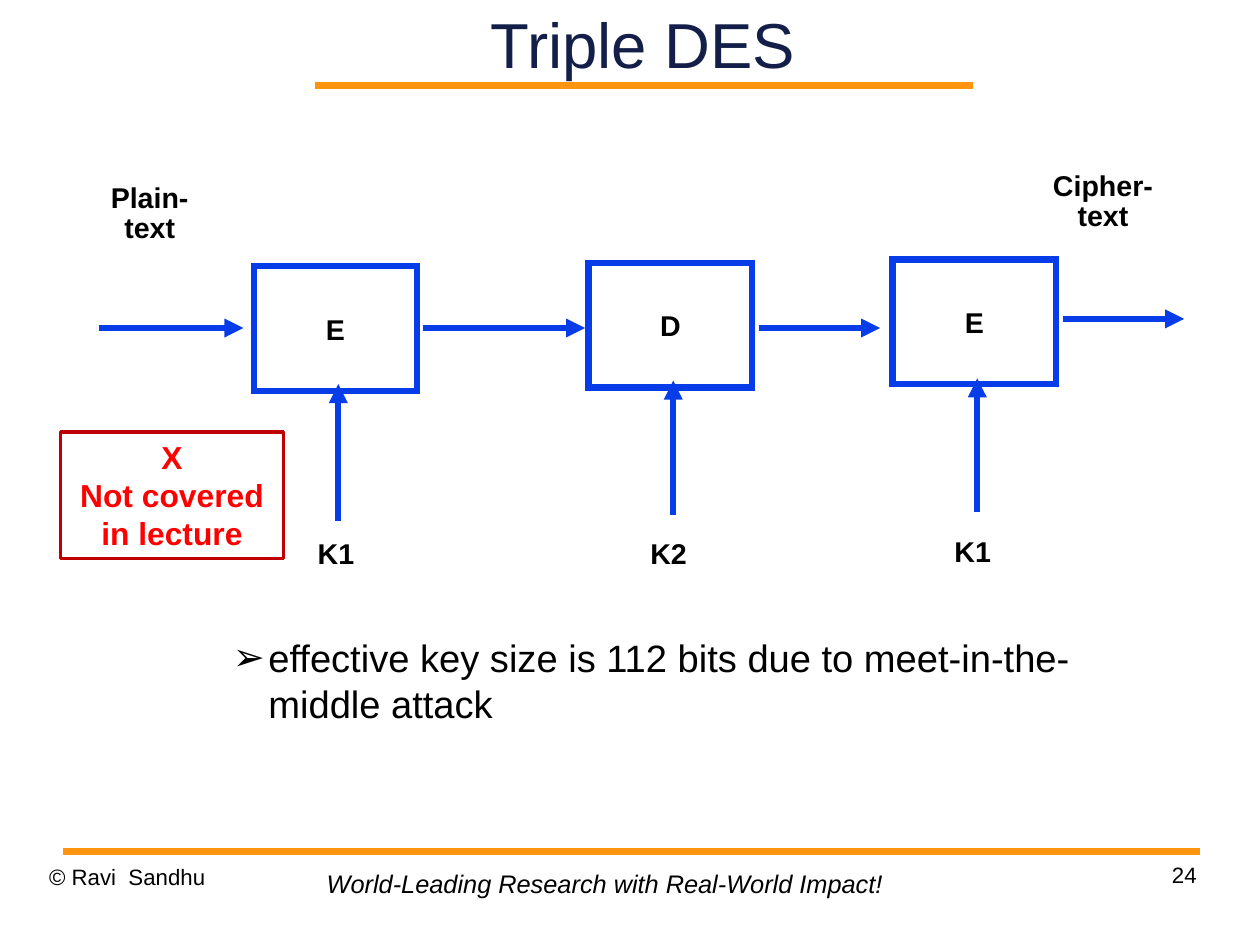
"""Build the Triple DES slide: an encrypt-decrypt-encrypt chain with its keys."""
from lxml import etree
from pptx import Presentation
from pptx.dml.color import RGBColor
from pptx.enum.shapes import MSO_CONNECTOR as Connector, MSO_SHAPE as Shape
from pptx.enum.text import MSO_ANCHOR as Anchor, PP_ALIGN as Align
from pptx.oxml.ns import qn
from pptx.util import Inches, Pt

COLORS = {"title": "131F49", "text": "000000", "rule": "FF950E", "flow": "063DE8",
          "note": "FF0000", "note_border": "C00000"}
CM_PER_INCH = 2.54
LABEL = {"size": Pt(18), "bold": True}
FOOTER = {"size": Pt(14)}
FRAMED = (0.1, 0.05)
TIGHT = (0.07, 0.03)
FLUSH = (0, 0)


def write(shape, lines, font, color="text", align=Align.LEFT, anchor=Anchor.TOP,
          margins=FRAMED, wrap=True, spacing=None):
    frame = shape.text_frame
    horizontal, vertical = map(Inches, margins)
    settings = {"margin_left": horizontal, "margin_right": horizontal,
                "margin_top": vertical, "margin_bottom": vertical,
                "vertical_anchor": anchor, "word_wrap": wrap}
    for name, value in settings.items():
        setattr(frame, name, value)
    for index, line in enumerate(lines):
        paragraph = frame.add_paragraph() if index else frame.paragraphs[0]
        paragraph.alignment = align
        paragraph.line_spacing = spacing
        run = paragraph.add_run()
        run.text = line
        for name, value in {"name": "Arial", **font}.items():
            setattr(run.font, name, value)
        run.font.color.rgb = RGBColor.from_string(COLORS[color])


def add_line(start, end, color, width, arrow=False):
    line = slide.shapes.add_connector(Connector.STRAIGHT, *map(Inches, start + end))
    line.line.color.rgb = RGBColor.from_string(COLORS[color])
    line.line.width = Pt(width)
    if arrow:
        etree.SubElement(line.line._get_or_add_ln(), qn("a:tailEnd"), type="triangle")
    etree.SubElement(line._element.spPr, qn("a:effectLst"))


presentation = Presentation()
presentation.slide_width = Inches(28 / CM_PER_INCH)
presentation.slide_height = Inches(21 / CM_PER_INCH)
slide = presentation.slides.add_slide(presentation.slide_layouts[6])

for left, right, top in [(2.76, 8.51, 0.75), (0.55, 10.5, 7.45)]:
    add_line((left, top), (right, top), "rule", 4.31)

texts = [
    ((0.43, 7.55, 2.57, 0.57), ["© Ravi  Sandhu"], FOOTER,
     {"margins": FLUSH, "spacing": 1.01}),
    ((7.9, 7.53, 2.57, 0.57), ["24"], FOOTER,
     {"margins": FLUSH, "spacing": 1.01, "align": Align.RIGHT}),
    ((2.76, 7.55, 5.08, 0.37), ["World-Leading Research with Real-World Impact!"],
     {"size": Pt(16), "italic": True}, {"wrap": False}),
    ((2.41, 0, 6.43, 0.75), ["Triple DES"], {"size": Pt(40)},
     {"color": "title", "align": Align.CENTER, "anchor": Anchor.MIDDLE, "margins": FLUSH}),
]
for left, top, width, word in [(0.78, 1.59, 1.06, "Plain-"), (8.99, 1.48, 1.32, "Cipher-")]:
    texts.append(((left, top, width, 0.76), [word, "text"], LABEL,
                  {"align": Align.CENTER, "margins": TIGHT, "wrap": False, "spacing": 0.87}))
for left, top, key in [(2.71, 4.7, "K1"), (5.62, 4.7, "K2"), (8.28, 4.68, "K1")]:
    texts.append(((left, top, 0.58, 0.42), [key], LABEL,
                  {"margins": TIGHT, "wrap": False, "spacing": 0.87}))
for place, lines, font, options in texts:
    write(slide.shapes.add_textbox(*map(Inches, place)), lines, font, **options)

body = slide.shapes.add_textbox(*map(Inches, (1.31, 5.5, 8.5, 1.08)))
bullet = body.text_frame.paragraphs[0]
bullet.level = 1
properties = bullet._p.get_or_add_pPr()
properties.set("marL", str(Inches(0.94)))
properties.set("indent", str(Inches(-0.31)))
bullet_color = etree.SubElement(properties, qn("a:buClr"))
etree.SubElement(bullet_color, qn("a:srgbClr"), val=COLORS["text"])
etree.SubElement(properties, qn("a:buFont"), typeface="Arial")
etree.SubElement(properties, qn("a:buChar"), char="➢")
write(body, ["effective key size is 112 bits due to meet-in-the-middle attack"], {"size": Pt(24)})

stage = {"font": LABEL, "align": Align.CENTER, "anchor": Anchor.MIDDLE, "wrap": False}
note = {"font": {"size": Pt(20), "bold": True}, "color": "note", "align": Align.CENTER}
boxes = [
    ((2.22, 2.33, 1.43, 1.09), ["E"], "flow", 4, stage),
    ((5.15, 2.3, 1.43, 1.09), ["D"], "flow", 4, stage),
    ((7.81, 2.27, 1.43, 1.09), ["E"], "flow", 4, stage),
    ((0.53, 3.78, 1.95, 1.11), ["X", "Not covered in lecture"], "note_border", 2, note),
]
for place, lines, border, width, options in boxes:
    box = slide.shapes.add_shape(Shape.RECTANGLE, *map(Inches, place))
    box.shadow.inherit = False
    box.fill.background()
    box.line.color.rgb = RGBColor.from_string(COLORS[border])
    box.line.width = Pt(width)
    if options is stage:
        etree.SubElement(box.line._get_or_add_ln(), qn("a:miter"), lim="800000")
    write(box, lines, **options)

for left, right, top in [(0.87, 2.13, 2.87), (3.7, 5.12, 2.87), (6.64, 7.7, 2.87),
                         (9.3, 10.36, 2.79)]:
    add_line((left, top), (right, top), "flow", 4, arrow=True)
for left, bottom, top in [(2.96, 4.56, 3.36), (5.89, 4.51, 3.33), (8.55, 4.48, 3.31)]:
    add_line((left, bottom), (left, top), "flow", 4, arrow=True)

presentation.save("out.pptx")
